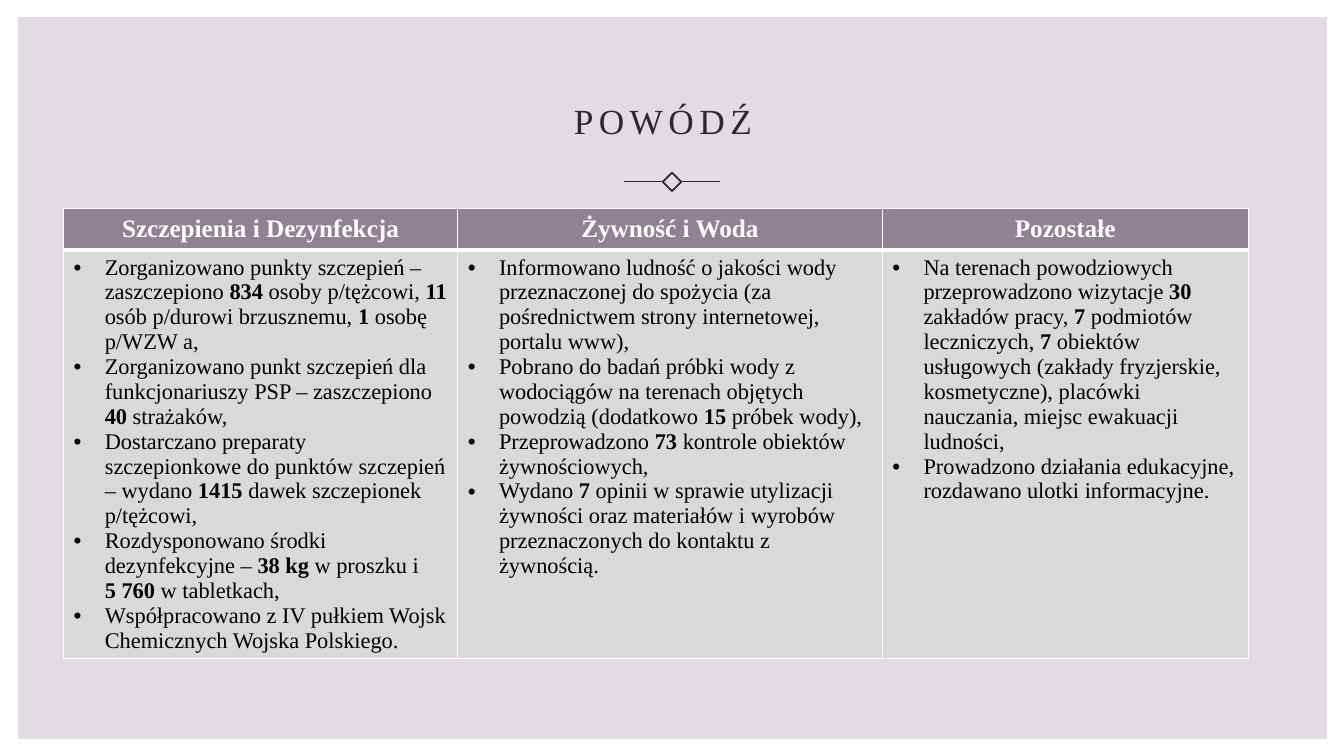
from pptx import Presentation
from pptx.dml.color import RGBColor
from pptx.enum.shapes import MSO_CONNECTOR, MSO_SHAPE
from pptx.enum.text import MSO_ANCHOR, PP_ALIGN
from pptx.oxml.ns import qn
from pptx.util import Inches, Pt
from lxml.etree import SubElement

COLUMNS = [
    ("Szczepienia i Dezynfekcja", 3.91, [
        "Zorganizowano punkty szczepień – zaszczepiono *834* osoby p/tężcowi, "
        "*11* osób p/durowi brzusznemu, *1* osobę p/WZW a,",
        "Zorganizowano punkt szczepień dla funkcjonariuszy PSP – zaszczepiono *40* strażaków,",
        "Dostarczano preparaty szczepionkowe do punktów szczepień – wydano "
        "*1415 *dawek szczepionek p/tężcowi,",
        "Rozdysponowano środki dezynfekcyjne – *38 kg *w proszku i \n*5 760* w tabletkach,",
        "Współpracowano z IV pułkiem Wojsk Chemicznych Wojska Polskiego.",
    ]),
    ("Żywność i Woda", 4.21, [
        "Informowano ludność o jakości wody przeznaczonej do spożycia "
        "(za pośrednictwem strony internetowej, portalu www),",
        "Pobrano do badań próbki wody z wodociągów na terenach objętych powodzią "
        "(dodatkowo *15 *próbek wody),",
        "Przeprowadzono *73 *kontrole obiektów żywnościowych,",
        "Wydano *7 *opinii w sprawie utylizacji żywności oraz materiałów i wyrobów "
        "przeznaczonych do kontaktu z żywnością.",
    ]),
    ("Pozostałe", 3.63, [
        "Na terenach powodziowych przeprowadzono wizytacje *30 *zakładów pracy, "
        "*7* podmiotów leczniczych, *7 *obiektów usługowych (zakłady fryzjerskie, "
        "kosmetyczne), placówki nauczania, miejsc ewakuacji ludności,",
        "Prowadzono działania edukacyjne, rozdawano ulotki informacyjne.",
    ]),
]
ROW_HEIGHTS = (0.41, 4.05)


def rgb(value):
    return RGBColor.from_string(value)


class SlideBuilder:
    FONT = "Times New Roman"
    INK, WHITE, BLACK = "2C2830", "FFFFFF", "000000"
    PANEL, HEADER, BODY = "E0DCE1", "908193", "DBD8DC"

    def __init__(self, prs):
        self.s = prs.slides.add_slide(prs.slide_layouts[5])
        self.s.background.fill.solid()
        self.s.background.fill.fore_color.rgb = rgb(self.WHITE)

    def run(self, p, text, color, **formats):
        r = p.add_run()
        r.text = text
        for name, value in {"name": self.FONT, **formats}.items():
            setattr(r.font, name, value)
        r.font.color.rgb = rgb(color)
        return r

    def rich_text(self, p, text, color, size):
        """Write text in which *asterisks* enclose bold and a newline breaks the line."""
        for i, part in enumerate(text.split("*")):
            for j, piece in enumerate(part.split("\n")):
                if j:
                    p.add_line_break()
                if piece:
                    self.run(p, piece, color, size=size, bold=i % 2 == 1)

    def rectangle(self, x, y, w, h, fill=None, line=None, rotation=0):
        sp = self.s.shapes.add_shape(MSO_SHAPE.RECTANGLE, *map(Inches, (x, y, w, h)))
        sp.shadow.inherit = False
        sp.rotation = rotation
        if fill:
            sp.fill.solid()
            sp.fill.fore_color.rgb = rgb(fill)
        else:
            sp.fill.background()
        if line:
            sp.line.color.rgb = rgb(line)
            sp.line.width = Pt(1.25)
        else:
            sp.line.fill.background()

    def line(self, x1, x2, y):
        c = self.s.shapes.add_connector(MSO_CONNECTOR.STRAIGHT, *map(Inches, (x1, y, x2, y)))
        c.line.color.rgb = rgb(self.INK)
        c.line.width = Pt(1.25)
        SubElement(c._element.spPr, qn("a:effectLst"))

    def title(self, text, x, y, w, h):
        sp = self.s.shapes.title
        # The placeholder moves in front of the panel.
        self.s.shapes._spTree.append(sp._element)
        sp.left, sp.top, sp.width, sp.height = map(Inches, (x, y, w, h))
        tf = sp.text_frame
        tf.vertical_anchor = MSO_ANCHOR.BOTTOM
        p = tf.paragraphs[0]
        p.alignment = PP_ALIGN.CENTER
        p.line_spacing = 1.1
        r = self.run(p, text, self.INK, size=Pt(25.2))
        r.font._element.set("spc", "390")

    def bullet(self, p):
        pPr = p._p.get_or_add_pPr()
        pPr.set("marL", str(Inches(0.31)))
        pPr.set("indent", str(-Inches(0.31)))
        SubElement(pPr, qn("a:buFont"), typeface="Arial")
        SubElement(pPr, qn("a:buChar"), char="•")

    def style_cell(self, cell, fill, borders):
        """Fill the cell and draw white borders, given as side: points."""
        tcPr = cell._tc.get_or_add_tcPr()
        for side, points in borders.items():
            ln = SubElement(tcPr, qn(f"a:ln{side}"), w=str(Pt(points)))
            SubElement(SubElement(ln, qn("a:solidFill")), qn("a:srgbClr"), val=self.WHITE)
        cell.fill.solid()
        cell.fill.fore_color.rgb = rgb(fill)

    def table(self, columns, x, y):
        width = sum(w for _, w, _ in columns)
        size = map(Inches, (x, y, width, sum(ROW_HEIGHTS)))
        table = self.s.shapes.add_table(2, len(columns), *size).table
        for row, height in zip(table.rows, ROW_HEIGHTS):
            row.height = Inches(height)
        for i, (heading, w, items) in enumerate(columns):
            table.columns[i].width = Inches(w)
            head, body = table.cell(0, i), table.cell(1, i)
            self.style_cell(head, self.HEADER, {"L": 1, "R": 1, "T": 1, "B": 3})
            self.style_cell(body, self.BODY, {"L": 1, "R": 1, "T": 3, "B": 1})
            head.vertical_anchor = MSO_ANCHOR.MIDDLE
            p = head.text_frame.paragraphs[0]
            p.alignment = PP_ALIGN.CENTER
            self.run(p, heading, self.WHITE, size=Pt(18), bold=True)
            tf = body.text_frame
            for j, item in enumerate(items):
                p = tf.add_paragraph() if j else tf.paragraphs[0]
                self.bullet(p)
                self.rich_text(p, item, self.BLACK, Pt(16))


def main():
    prs = Presentation()
    prs.slide_width, prs.slide_height = Inches(13.33), Inches(7.5)
    slide = SlideBuilder(prs)
    slide.rectangle(0.18, 0.17, 12.98, 7.16, fill=slide.PANEL)
    slide.title("POWÓDŹ", 5.33, 0.89, 2.49, 0.56)
    slide.rectangle(6.6, 1.74, 0.13, 0.13, line=slide.INK, rotation=45)
    for start, end in ((6.19, 6.58), (6.76, 7.14)):
        slide.line(start, end, 1.8)
    slide.table(COLUMNS, 0.63, 2.07)
    prs.save("out.pptx")


if __name__ == "__main__":
    main()
